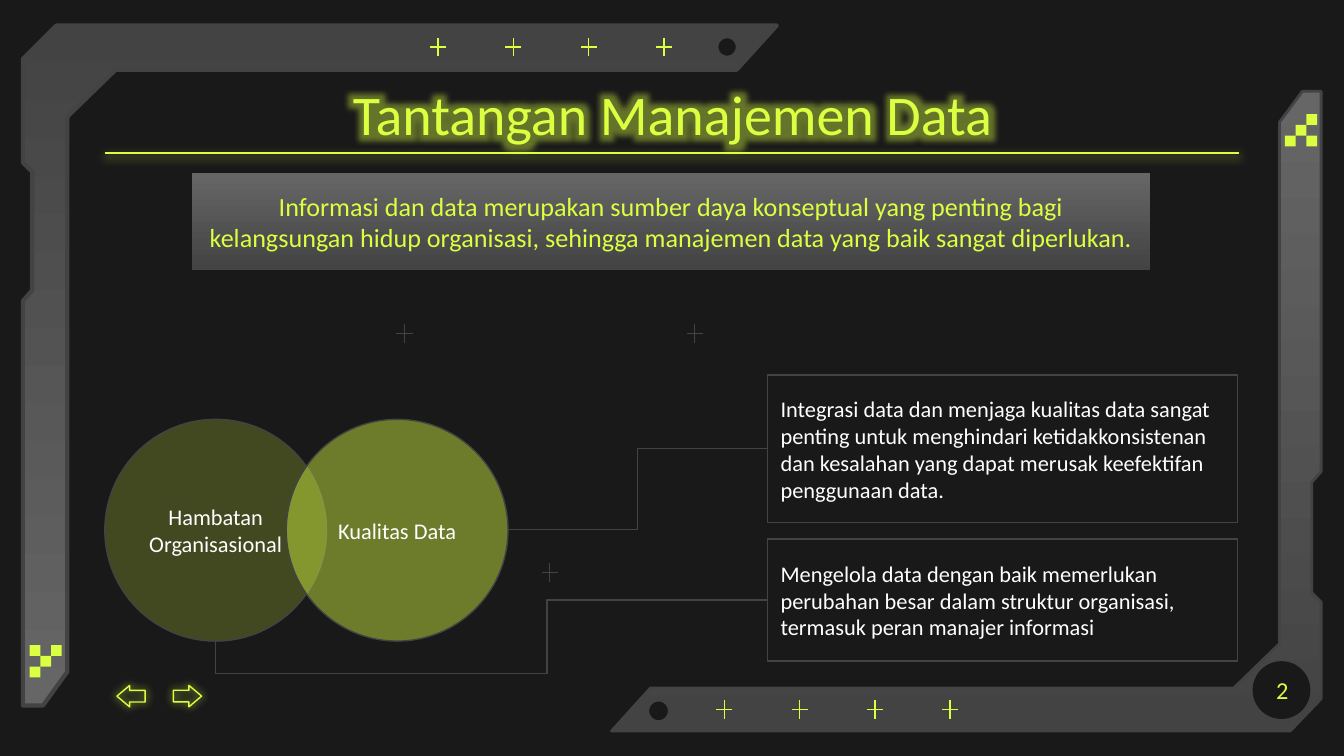
"""Build the slide on the challenges of data management."""
import math
from lxml import etree
from pptx import Presentation, util as u
from pptx.dml.color import RGBColor
from pptx.enum import shapes as s, text as t
from pptx.oxml.ns import qn

HUE = {"back": "191919", "lime": "DBFF41", "light": "666666", "dark": "434343", "white": "FFFFFF"}
FONT = "Calibri"
WIDE, HIGH = 10, 10 * 9 / 16
TITLE = "Tantangan Manajemen Data"
LEAD = ("Informasi dan data merupakan sumber daya konseptual yang penting bagi kelangsungan "
        "hidup organisasi, sehingga manajemen data yang baik sangat diperlukan.")
BALLS = [("Hambatan Organisasional", 0.78, 21), ("Kualitas Data", 2.13, 43)]
NOTES = [
    ("Mengelola data dengan baik memerlukan perubahan besar dalam struktur organisasi, "
     "termasuk peran manajer informasi", 4.01, 0.91),
    ("Integrasi data dan menjaga kualitas data sangat penting untuk menghindari ketidakkonsistenan "
     "dan kesalahan yang dapat merusak keefektifan penggunaan data.", 2.79, 1.1),
]
FRAMES = [
    ([(9.69, 0.68), (9.52, 0.91), (9.52, 4.79), (9.18, 5.12), (4.84, 5.12), (4.55, 5.44),
      (9.6, 5.44), (9.83, 5.2), (9.83, 4.48), (9.76, 4.41), (9.76, 3.59), (9.83, 3.51),
      (9.83, 0.68)], (4.9, 5.29), ("light", "dark"), 1.5),
    ([(0.32, 5.25), (0.5, 5), (0.5, 0.87), (0.86, 0.52), (5.48, 0.52), (5.78, 0.19),
      (0.42, 0.19), (0.17, 0.44), (0.17, 1.21), (0.24, 1.28), (0.24, 2.16), (0.17, 2.24),
      (0.17, 5.25)], (5.41, 0.35), ("dark", "light"), 2.25),
]
ROWS = [(3.26, 0.35), (5.39, 5.28)]
STEP = 0.56
MARKS = [(3.01, 2.48), (5.17, 2.48), (4.09, 4.26)]
CELL = 0.08
TILES = [(9.56, 0.85, [(2, 2), (0, 2), (1, 1), (2, 0)]),
         (0.22, 4.8, [(0, 0), (2, 0), (1, 1), (0, 2)])]
ARROWS = [(1.29, 0), (0.87, 180)]
KIND, LINK = s.MSO_SHAPE, s.MSO_CONNECTOR


def cm(inch):
    return u.Cm(inch * 2.54)


def rgb(name):
    return RGBColor.from_string(HUE[name])


def effect(host, kind, alpha, **attrs):
    node = etree.SubElement(host, qn("a:" + kind), {k: str(v) for k, v in attrs.items()})
    tint = etree.SubElement(node, qn("a:srgbClr"), val=HUE["lime"])
    etree.SubElement(tint, qn("a:alpha"), val=str(alpha * 1000))


def glow(host, dist, turn):
    effect(host, "outerShdw", 100, blurRad=u.Pt(4.5), dist=u.Pt(dist), dir=turn * 60000)


def style(item, fill=None, line=None, width=0.75, alpha=None):
    item.shadow.inherit = False
    if isinstance(fill, tuple):
        item.fill.gradient()
        item.fill.gradient_angle = 270
        for stop, name in zip(item.fill.gradient_stops, fill):
            stop.color.rgb = rgb(name)
    elif fill:
        item.fill.solid()
        item.fill.fore_color.rgb = rgb(fill)
        if alpha:
            tint = item.fill._xPr.find(".//" + qn("a:srgbClr"))
            etree.SubElement(tint, qn("a:alpha"), val=str(alpha * 1000))
    else:
        item.fill.background()
    if line:
        item.line.color.rgb = rgb(line)
        item.line.width = u.Pt(width)
    else:
        item.line.fill.background()
    return item


def shape(home, kind, box, *args, **opts):
    return style(home.add_shape(kind, *map(cm, box)), *args, **opts)


def wire(home, kind, start, end, hue):
    item = home.add_connector(kind, *map(cm, start + end))
    item.line.color.rgb = rgb(hue)
    item.line.width = u.Pt(0.75)
    return item, etree.SubElement(item._element.spPr, qn("a:effectLst"))


def write(item, words, size, hue, mid=True, center=True, side=0.1):
    frame = item.text_frame
    frame.word_wrap = True
    frame.vertical_anchor = t.MSO_ANCHOR.MIDDLE if mid else t.MSO_ANCHOR.TOP
    frame.margin_left = frame.margin_right = cm(side)
    frame.margin_top = frame.margin_bottom = cm(0.1)
    para = frame.paragraphs[0]
    para.alignment = t.PP_ALIGN.CENTER if center else t.PP_ALIGN.LEFT
    run = para.add_run()
    run.text = words
    run.font.size, run.font.name = u.Pt(size), FONT
    run.font.color.rgb = rgb(hue)
    return run


def cross(home, spots, hue):
    group = home.add_group_shape().shapes
    for x, y in spots:
        wire(group, LINK.STRAIGHT, (x, y - 0.07), (x, y + 0.07), hue)
        wire(group, LINK.STRAIGHT, (x + 0.06, y), (x - 0.06, y), hue)


def frame(home, edge, hole, fill, width):
    turns = [math.tau * i / 32 for i in range(32)]
    ring = [(hole[0] + 0.08 * math.cos(a), hole[1] - 0.08 * math.sin(a)) for a in turns]
    pen = None
    for path in (ring, edge):
        spots = [(cm(x), cm(y)) for x, y in path]
        if pen is None:
            pen = home.build_freeform(*spots[0])
        else:
            pen.move_to(*spots[0])
        pen.add_line_segments(spots[1:], close=True)
    style(pen.convert_to_shape(), fill, "dark", width)


def bend(item):
    node = item._element.spPr
    node.find(qn("a:xfrm")).set("rot", str(90 * 60000))
    geom = node.find(qn("a:prstGeom"))
    geom.set("prst", "bentConnector4")
    for name, val in (("adj1", -82400), ("adj2", 60000)):
        etree.SubElement(geom.find(qn("a:avLst")), qn("a:gd"), name=name, fmla=f"val {val}")


def main():
    deck = Presentation()
    deck.slide_width, deck.slide_height = cm(WIDE), cm(HIGH)
    slide = deck.slides.add_slide(deck.slide_layouts[6])
    slide.background.fill.solid()
    slide.background.fill.fore_color.rgb = rgb("back")
    home = slide.shapes

    frame(home, *FRAMES[0])
    shape(home, KIND.OVAL, (9.32, 4.92, 0.43, 0.43), "back")
    frame(home, *FRAMES[1])
    for x, y in ROWS:
        cross(home, [(x + STEP * i, y) for i in range(4)], "lime")
    for x, y, cells in TILES:
        group = home.add_group_shape().shapes
        for col, row in cells:
            shape(group, KIND.RECTANGLE, (x + CELL * col, y + CELL * row, CELL, CELL), "lime")

    write(home.add_textbox(*map(cm, (9.24, 4.92, 0.6, 0.43))), "2", 13, "lime")
    head = write(home.add_textbox(*map(cm, (0.79, 0.49, 8.43, 1))), TITLE, 30, "lime", mid=False)
    halo = etree.Element(qn("a:effectLst"))
    effect(halo, "glow", 40, rad=u.Pt(18))
    head.font._element.find(qn("a:solidFill")).addnext(halo)
    glow(wire(home, LINK.STRAIGHT, (0.78, 1.14), (9.22, 1.14), "lime")[1], 1.5, 90)

    for words, x, alpha in BALLS:
        ball = shape(home, KIND.OVAL, (x, 3.12, 1.65, 1.65), "lime", "dark", alpha=alpha)
        write(ball, words, 12, "white", side=0)
    for words, y, high in NOTES:
        note = shape(home, KIND.RECTANGLE, (5.71, y, 3.5, high), None, "dark")
        write(note, words, 12, "white", center=False)
    lead = shape(home, KIND.RECTANGLE, (1.43, 1.29, 7.13, 0.72), ("light", "dark"))
    write(lead, LEAD, 14, "lime")

    wire(home, LINK.ELBOW, (3.78, 3.94), (5.71, 3.34), "dark")
    bend(wire(home, LINK.ELBOW, (3.81, 6.67), (3.51, 2.56), "dark")[0])
    cross(home, MARKS, "dark")
    for x, turn in ARROWS:
        arrow = shape(home, KIND.RIGHT_ARROW, (x, 5.1, 0.21, 0.16), None, "lime")
        arrow.adjustments[0], arrow.adjustments[1] = 0.54, 0.59
        arrow.rotation = turn
        glow(arrow._element.spPr.find(qn("a:effectLst")), 0, 0)
    deck.save("out.pptx")


if __name__ == "__main__":
    main()
